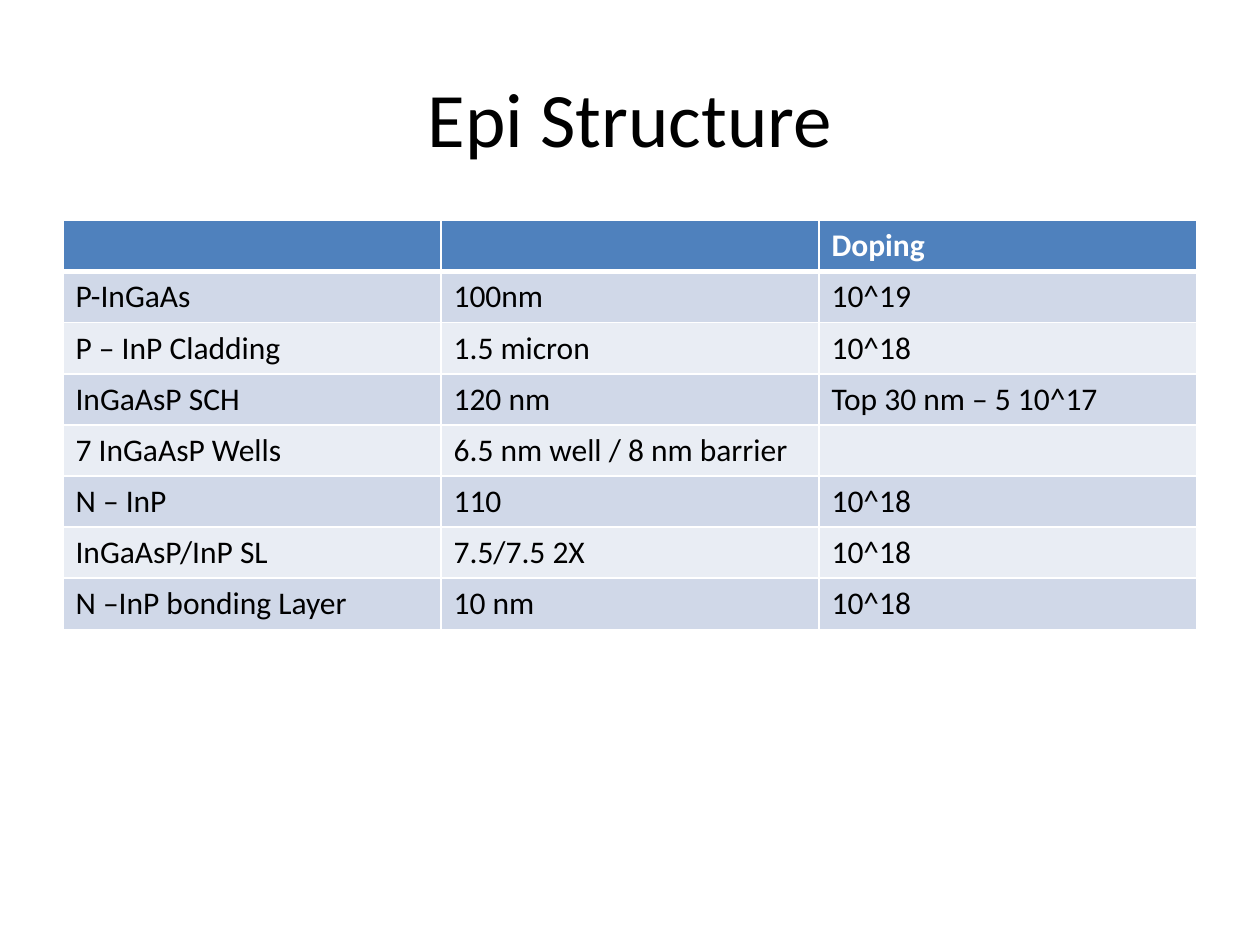
import pptx
import pptx.dml.color
import pptx.enum.text
import pptx.oxml.ns
import pptx.util
import lxml.etree

Pt = pptx.util.Pt
RGBColor = pptx.dml.color.RGBColor
BLACK = RGBColor(0x00, 0x00, 0x00)
WHITE = RGBColor(0xFF, 0xFF, 0xFF)
HEADER = RGBColor(0x4F, 0x81, 0xBD)
BANDS = (RGBColor(0xD0, 0xD8, 0xE8), RGBColor(0xE9, 0xED, 0xF4))

LAYERS = [
    ("", "", "Doping"),
    ("P-InGaAs", "100nm", "10^19"),
    ("P – InP Cladding", "1.5 micron", "10^18"),
    ("InGaAsP SCH", "120 nm", "Top 30 nm – 5 10^17"),
    ("7 InGaAsP Wells", "6.5 nm well / 8 nm barrier", ""),
    ("N – InP", "110", "10^18"),
    ("InGaAsP/InP SL", "7.5/7.5 2X", "10^18"),
    ("N –InP bonding Layer", "10 nm", "10^18"),
]


def set_text(tf, text, size=18, color=BLACK, bold=False, align=None):
    """Write one formatted run into a text frame."""
    p = tf.paragraphs[0]
    p.alignment = align
    p.font.size = Pt(size)
    if text:
        r = p.add_run()
        r.text = text
        r.font.name = "Calibri"
        r.font.size = Pt(size)
        r.font.bold = bold
        r.font.color.rgb = color


def set_border(cell, side, width):
    """Draw a white line on one side (L, R, T or B) of a cell."""
    qn = pptx.oxml.ns.qn
    tc_pr = cell._tc.get_or_add_tcPr()
    ln = lxml.etree.SubElement(tc_pr, qn(f"a:ln{side}"), w=str(Pt(width)))
    fill = lxml.etree.SubElement(ln, qn("a:solidFill"))
    lxml.etree.SubElement(fill, qn("a:srgbClr"), val=str(WHITE))


def add_title(s, text):
    """Place and fill the title placeholder."""
    sp = s.shapes.title
    sp.left, sp.top, sp.width, sp.height = Pt(36), Pt(21.6), Pt(648), Pt(90)
    sp.text_frame.vertical_anchor = pptx.enum.text.MSO_ANCHOR.MIDDLE
    set_text(sp.text_frame, text, size=44, align=pptx.enum.text.PP_ALIGN.CENTER)


def format_cell(cell, text, row):
    """Format a cell as header or banded body by its row."""
    header = row == 0
    widths = {"L": 1, "R": 1, "T": 3 if row == 1 else 1, "B": 3 if header else 1}
    for side, width in widths.items():
        set_border(cell, side, width)
    cell.fill.solid()
    cell.fill.fore_color.rgb = HEADER if header else BANDS[(row - 1) % 2]
    set_text(cell.text_frame, text, color=WHITE if header else BLACK, bold=header)


def add_layer_table(s, rows):
    """Add the table of epitaxial layers."""
    table = s.shapes.add_table(
        len(rows), len(rows[0]), Pt(36), Pt(126), Pt(648), Pt(29.2 * len(rows))
    ).table
    for i, values in enumerate(rows):
        for j, text in enumerate(values):
            format_cell(table.cell(i, j), text, i)


def main():
    """Build and save the slide."""
    prs = pptx.Presentation()
    prs.slide_width, prs.slide_height = Pt(720), Pt(540)
    s = prs.slides.add_slide(prs.slide_layouts[5])
    add_title(s, "Epi Structure")
    add_layer_table(s, LAYERS)
    prs.save("out.pptx")


if __name__ == "__main__":
    main()
